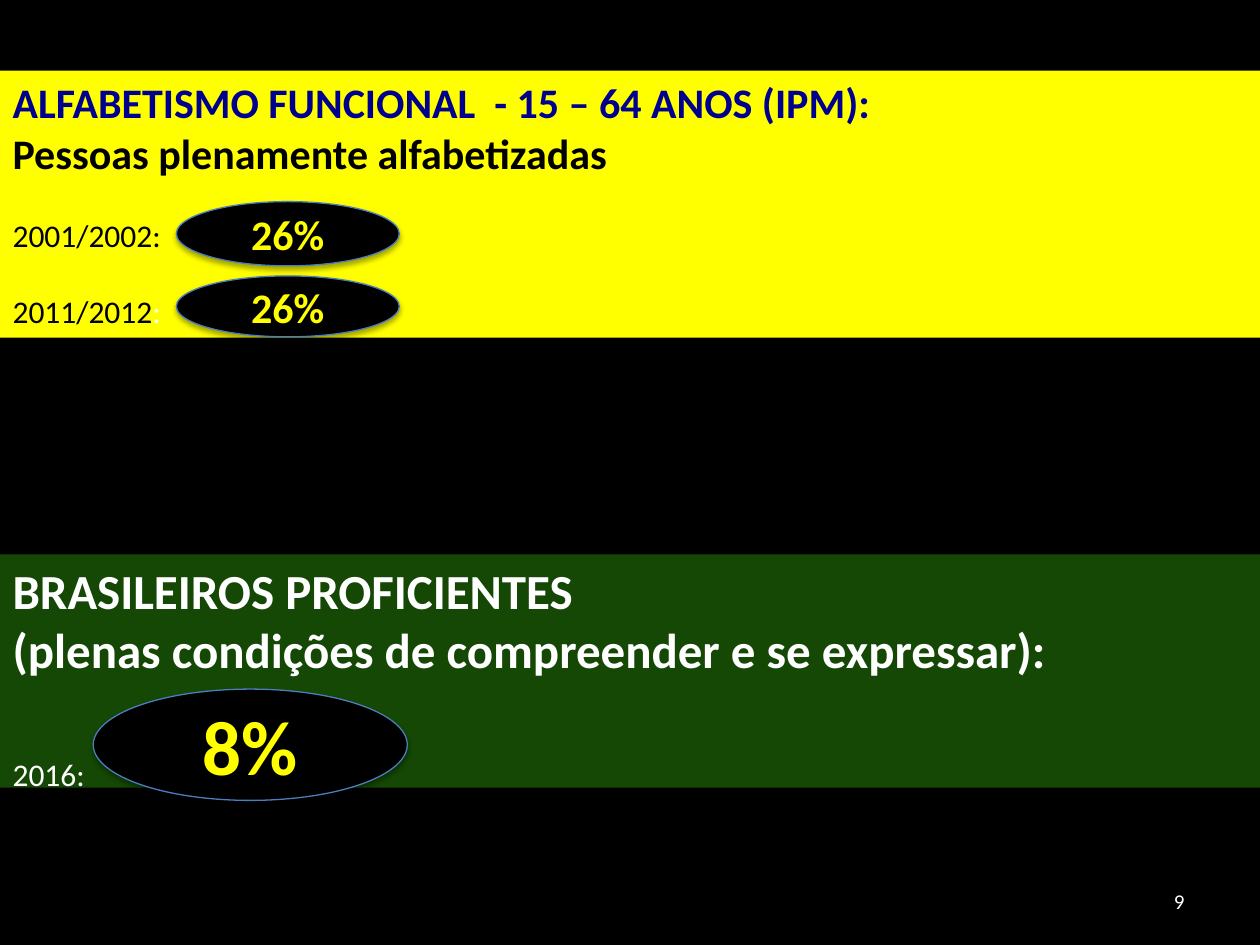
from dataclasses import dataclass

import pptx
import pptx.dml.color
import pptx.enum.shapes
import pptx.enum.text
import pptx.oxml
import pptx.oxml.ns
import pptx.util

Pt = pptx.util.Pt
Align = pptx.enum.text.PP_ALIGN
Anchor = pptx.enum.text.MSO_ANCHOR


@dataclass(frozen=True)
class Theme:
    font: str = "Calibri"
    black: str = "000000"
    white: str = "FFFFFF"
    yellow: str = "FFFF00"
    navy: str = "000090"
    green: str = "144804"
    outline: str = "4B7EBC"
    number_size: float = 12
    year_size: float = 18
    heading_size: float = 24
    large_heading_size: float = 28
    highlight_size: float = 44


THEME = Theme()


@dataclass(frozen=True)
class Line:
    text: str
    size: float
    color: str
    bold: bool = False
    space_before: float = 0


@dataclass(frozen=True)
class Band:
    top: float
    height: float
    fill: str
    lines: tuple[Line, ...]


@dataclass(frozen=True)
class Rate:
    text: str
    left: float
    top: float
    width: float
    height: float
    size: float = THEME.heading_size


SLIDE_WIDTH, SLIDE_HEIGHT = 720, 540

LITERACY = Band(40.3, 152.6, THEME.yellow, (
    Line("ALFABETISMO FUNCIONAL  - 15 – 64 ANOS (IPM):", THEME.heading_size, THEME.navy, True),
    Line("Pessoas plenamente alfabetizadas", THEME.heading_size, THEME.black, True),
    Line("2001/2002:", THEME.year_size, THEME.black, space_before=22),
    Line("2011/2012", THEME.year_size, THEME.black, space_before=22),
))
PROFICIENCY = Band(316.8, 140.4, THEME.green, (
    Line("BRASILEIROS PROFICIENTES", THEME.large_heading_size, THEME.white, True),
    Line("(plenas condições de compreender e se expressar):",
         THEME.large_heading_size, THEME.white, True),
    Line("2016:", THEME.year_size, THEME.white, space_before=44),
))
RATES = (
    Rate("26%", 100.8, 115.2, 127.4, 36.7),
    Rate("26%", 100.8, 157.7, 127.4, 34.8),
    Rate("8%", 53.3, 393.8, 179.5, 63.6, THEME.highlight_size),
)


def rgb(color: str) -> pptx.dml.color.RGBColor:
    return pptx.dml.color.RGBColor.from_string(color)


def write(paragraph, text: str, *, size: float, color: str, bold: bool = False,
          align=Align.LEFT, space_before: float = 0) -> None:
    paragraph.alignment = align
    paragraph.space_before = Pt(space_before)
    run = paragraph.add_run()
    run.text = text
    run.font.name = THEME.font
    run.font.size = Pt(size)
    run.font.bold = bold
    run.font.color.rgb = rgb(color)


def remove_bullet(paragraph) -> None:
    properties = paragraph._p.get_or_add_pPr()
    properties.set("marL", "0")
    properties.set("indent", "0")
    properties.append(pptx.oxml.parse_xml(
        f"<a:buNone {pptx.oxml.ns.nsdecls('a')}/>"))


def fill_band(placeholder, band: Band) -> None:
    placeholder.left, placeholder.top = Pt(0), Pt(band.top)
    placeholder.width, placeholder.height = Pt(SLIDE_WIDTH), Pt(band.height)
    placeholder.fill.solid()
    placeholder.fill.fore_color.rgb = rgb(band.fill)
    frame = placeholder.text_frame
    frame.word_wrap = True
    frame.vertical_anchor = Anchor.TOP
    frame.auto_size = pptx.enum.text.MSO_AUTO_SIZE.SHAPE_TO_FIT_TEXT
    for index, line in enumerate(band.lines):
        paragraph = frame.add_paragraph() if index else frame.paragraphs[0]
        write(paragraph, line.text, size=line.size, color=line.color,
              bold=line.bold, space_before=line.space_before)
        remove_bullet(paragraph)


def add_soft_shadow(shape) -> None:
    shape.shadow.inherit = False
    effects = shape._element.spPr.find(pptx.oxml.ns.qn("a:effectLst"))
    effects.append(pptx.oxml.parse_xml(
        f'<a:outerShdw {pptx.oxml.ns.nsdecls("a")} blurRad="{Pt(3.1)}" dist="{Pt(1.8)}" '
        f'dir="5400000" rotWithShape="0"><a:srgbClr val="{THEME.black}">'
        '<a:alpha val="35000"/></a:srgbClr></a:outerShdw>'))


def add_rate(slide, rate: Rate) -> None:
    oval = slide.shapes.add_shape(
        pptx.enum.shapes.MSO_SHAPE.OVAL,
        Pt(rate.left), Pt(rate.top), Pt(rate.width), Pt(rate.height))
    oval.fill.solid()
    oval.fill.fore_color.rgb = rgb(THEME.black)
    oval.line.color.rgb = rgb(THEME.outline)
    oval.line.width = Pt(0.75)
    add_soft_shadow(oval)
    oval.text_frame.vertical_anchor = Anchor.MIDDLE
    write(oval.text_frame.paragraphs[0], rate.text, size=rate.size,
          color=THEME.yellow, bold=True, align=Align.CENTER)


def add_page_number(slide, number: str) -> None:
    box = slide.shapes.add_textbox(Pt(516), Pt(500.5), Pt(168), Pt(28.75))
    box.text_frame.word_wrap = True
    box.text_frame.vertical_anchor = Anchor.MIDDLE
    write(box.text_frame.paragraphs[0], number, size=THEME.number_size,
          color=THEME.white, align=Align.RIGHT)


def main() -> None:
    deck = pptx.Presentation()
    deck.slide_width, deck.slide_height = Pt(SLIDE_WIDTH), Pt(SLIDE_HEIGHT)
    slide = deck.slides.add_slide(deck.slide_layouts.get_by_name("Title and Content"))
    slide.background.fill.solid()
    slide.background.fill.fore_color.rgb = rgb(THEME.black)

    literacy, proficiency = slide.shapes.title, slide.placeholders[1]
    fill_band(literacy, LITERACY)
    write(literacy.text_frame.paragraphs[-1], ":", size=THEME.year_size,
          color=THEME.white, space_before=LITERACY.lines[-1].space_before)
    fill_band(proficiency, PROFICIENCY)
    for rate in RATES:
        add_rate(slide, rate)
    add_page_number(slide, "9")
    deck.save("out.pptx")


if __name__ == "__main__":
    main()
